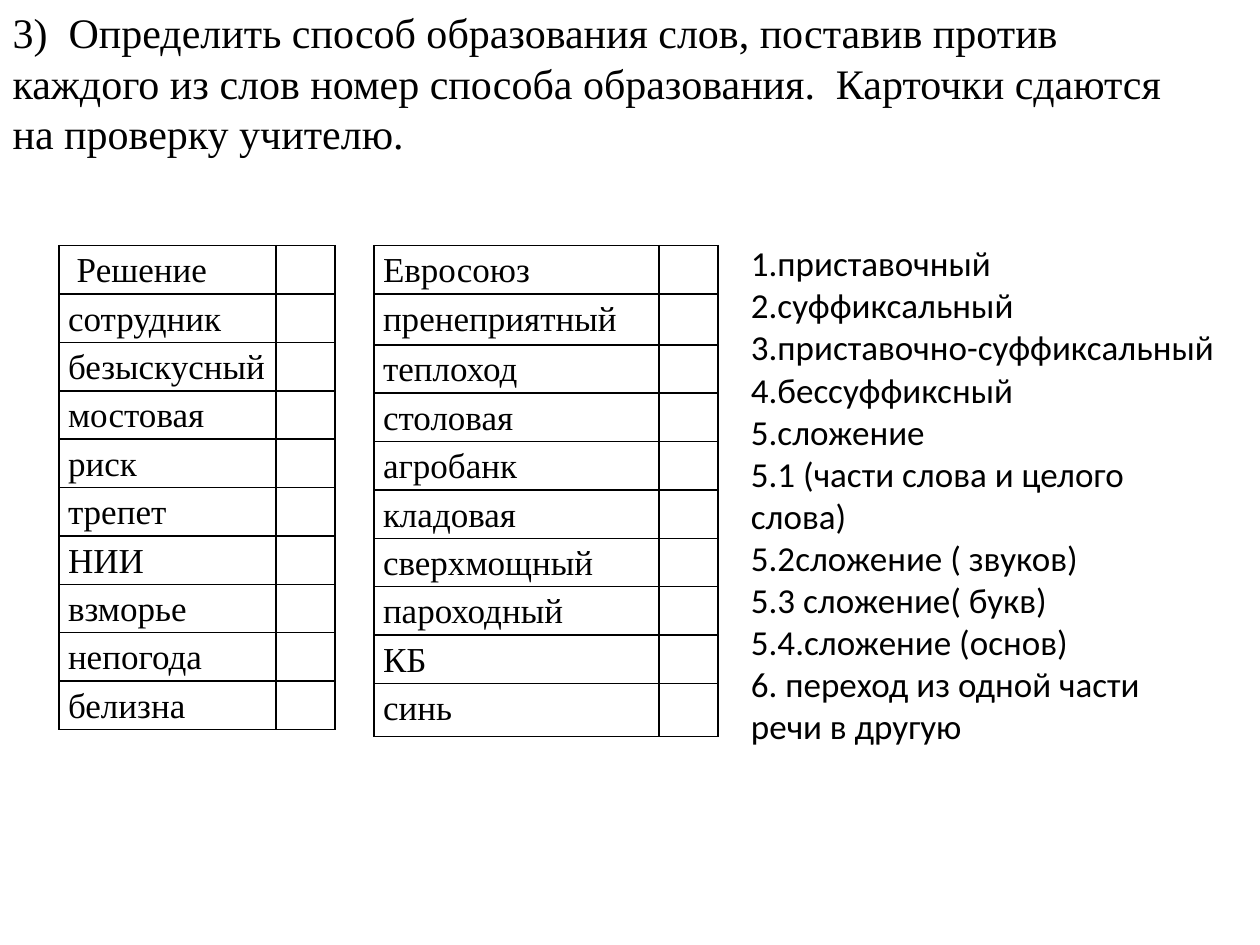
import dataclasses

import lxml.etree
import pptx
import pptx.dml.color
import pptx.enum.text
import pptx.oxml.ns
import pptx.util

Inches = pptx.util.Inches


@dataclasses.dataclass(frozen=True)
class Theme:
    """Colours, fonts and type sizes of the slide."""
    ink: str = "000000"
    serif: str = "Times New Roman"
    sans: str = "Calibri"
    head: int = 24
    text: int = 20
    rule: int = 1


THEME = Theme()
TASK = ("3)  Определить способ образования слов, поставив против каждого из слов "
        "номер способа образования.  Карточки сдаются на проверку учителю.")
LEFT = [" Решение", "сотрудник", "безыскусный", "мостовая", "риск",
        "трепет", "НИИ", "взморье", "непогода", "белизна"]
RIGHT = ["Евросоюз", "пренеприятный", "теплоход", "столовая", "агробанк",
         "кладовая", "сверхмощный", "пароходный", "КБ", "синь"]
WAYS = ["1.приставочный", "2.суффиксальный", "3.приставочно-суффиксальный",
        "4.бессуффиксный", "5.сложение", "5.1 (части слова и целого слова)",
        "5.2сложение ( звуков)", "5.3 сложение( букв)", "5.4.сложение (основ)",
        "6. переход из одной части речи в другую"]


def style(para, face, size):
    """Set the font of every run in a paragraph."""
    for run in para.runs:
        run.font.name = face
        run.font.size = pptx.util.Pt(size)
        run.font.color.rgb = pptx.dml.color.RGBColor.from_string(THEME.ink)


def place(shape, box):
    """Move a shape to a box given in inches."""
    shape.left, shape.top, shape.width, shape.height = map(Inches, box)


def add_title(slide, box):
    """Put the task in the title placeholder."""
    title = slide.shapes.title
    place(title, box)
    frame = title.text_frame
    frame.text = TASK
    frame.word_wrap = True
    frame.auto_size = pptx.enum.text.MSO_AUTO_SIZE.SHAPE_TO_FIT_TEXT
    frame.vertical_anchor = pptx.enum.text.MSO_ANCHOR.MIDDLE
    para = frame.paragraphs[0]
    para.alignment = pptx.enum.text.PP_ALIGN.LEFT
    style(para, THEME.serif, THEME.head)


def add_ways(slide, box):
    """List the ways of word formation in the body placeholder."""
    body = slide.placeholders[1]
    place(body, box)
    frame = body.text_frame
    frame.text = "\n".join(WAYS)
    frame.word_wrap = True
    frame.auto_size = pptx.enum.text.MSO_AUTO_SIZE.SHAPE_TO_FIT_TEXT
    for para in frame.paragraphs:
        props = para._p.get_or_add_pPr()
        props.set("marL", "0")
        props.set("indent", "0")
        lxml.etree.SubElement(props, pptx.oxml.ns.qn("a:buNone"))
        para.space_before = pptx.util.Pt(0)
        style(para, THEME.sans, THEME.text)


def frame_cell(cell):
    """Give a cell thin margins, four border lines and no fill."""
    cell.margin_left = cell.margin_right = Inches(0.07)
    cell.margin_top = cell.margin_bottom = 0
    props = cell._tc.get_or_add_tcPr()
    qn = pptx.oxml.ns.qn
    for side in ("a:lnL", "a:lnR", "a:lnT", "a:lnB"):
        line = lxml.etree.SubElement(props, qn(side), w=str(pptx.util.Pt(THEME.rule)))
        fill = lxml.etree.SubElement(line, qn("a:solidFill"))
        lxml.etree.SubElement(fill, qn("a:srgbClr"), val=THEME.ink)
    cell.fill.background()


def add_words(slide, box, words, extra):
    """Draw a word table with a narrow answer column and some taller rows."""
    left, top, width, high = box
    grid = slide.shapes.add_table(len(words), 2, *map(Inches, box)).table
    grid.first_row = grid.horz_banding = False
    blank = 0.47
    grid.columns[0].width = Inches(width - blank)
    grid.columns[1].width = Inches(blank)
    base = (high - sum(extra.values())) / len(words)
    for num, word in enumerate(words):
        grid.rows[num].height = Inches(base + extra.get(num, 0))
        for cell in grid.rows[num].cells:
            frame_cell(cell)
        cell = grid.cell(num, 0)
        cell.text_frame.text = word
        para = cell.text_frame.paragraphs[0]
        para.line_spacing = 1.15
        style(para, THEME.serif, THEME.text)


def main():
    """Build and save the slide."""
    deck = pptx.Presentation()
    deck.slide_width, deck.slide_height = Inches(10), Inches(7.5)
    slide = deck.slides.add_slide(deck.slide_layouts[1])
    add_title(slide, (0, 0, 9.69, 1.31))
    add_words(slide, (0.47, 1.95, 2.19, 3.83), LEFT, {})
    add_words(slide, (2.97, 1.95, 2.73, 3.89), RIGHT, {1: 0.02, 9: 0.04})
    add_ways(slide, (5.86, 1.87, 3.91, 4.14))
    deck.save("out.pptx")


if __name__ == "__main__":
    main()
